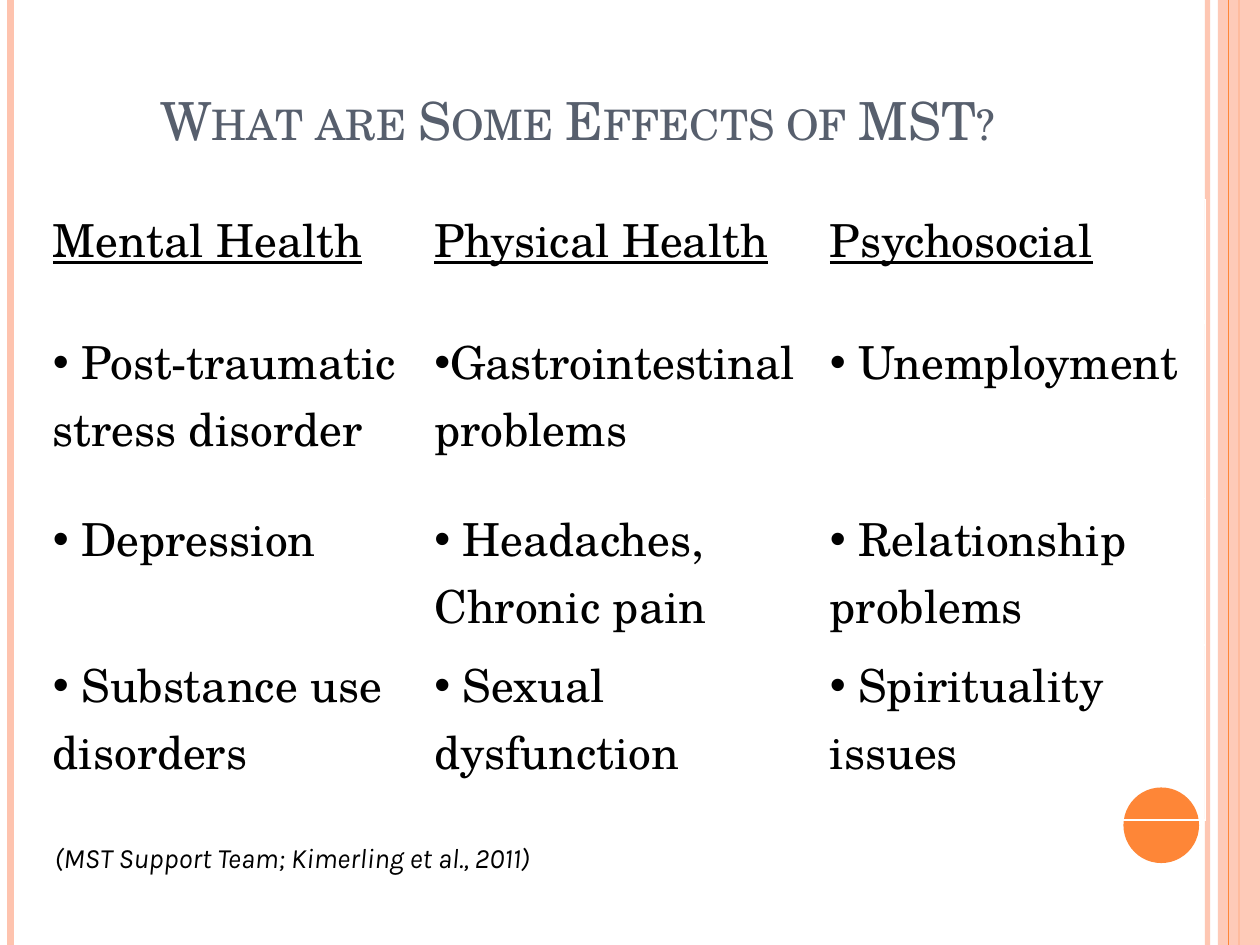
from pptx import Presentation
from pptx.dml.color import RGBColor
from pptx.enum import shapes, text
from pptx.oxml import parse_xml
from pptx.oxml.ns import nsdecls, qn
from pptx.util import Pt

SERIF, SANS = "TeX Gyre Schola", "Karla"
PEACH, ORANGE, SLATE = "FEC3AE", "FE8637", "575F6D"
BLACK, WHITE = "000000", "FFFFFF"


def rgb(value):
    return RGBColor.from_string(value)


def element(tag, **attrs):
    el = parse_xml(f"<a:{tag} {nsdecls('a')}/>")
    for name, value in attrs.items():
        el.set(name, str(value))
    return el


def fade(fill, percent):
    color = fill._xPr.find(qn("a:solidFill"))[0]
    color.append(element("alpha", val=percent * 1000))


class Deck:
    def __init__(self, width, height):
        self.prs = Presentation()
        self.prs.slide_width, self.prs.slide_height = Pt(width), Pt(height)
        self.height = height
        self.s = self.prs.slides.add_slide(self.prs.slide_layouts[5])

    def run(self, p, words, size, font=SERIF, color=BLACK):
        r = p.add_run()
        r.text = words
        r.font.size, r.font.name = Pt(size), font
        r.font.color.rgb = rgb(color)
        return r

    def title(self, words, box):
        sp = self.s.shapes.title
        sp.left, sp.top, sp.width, sp.height = map(Pt, box)
        tf = sp.text_frame
        tf.vertical_anchor = text.MSO_ANCHOR.BOTTOM
        p = tf.paragraphs[0]
        p.alignment = text.PP_ALIGN.CENTER
        r = self.run(p, words, 30, color=SLATE)
        r.font._element.set("cap", "small")

    def stripe(self, x, weight, color, opacity=100):
        line = self.s.shapes.add_connector(
            shapes.MSO_CONNECTOR.STRAIGHT, Pt(x), 0, Pt(x), Pt(self.height))
        line.line.width = Pt(weight)
        line.line.color.rgb = rgb(color)
        if opacity < 100:
            fade(line.line.fill, opacity)
        line._element.spPr.append(element("effectLst"))

    def shape(self, kind, box, color, opacity=100):
        sp = self.s.shapes.add_shape(kind, *map(Pt, box))
        sp.shadow.inherit = False
        sp.fill.solid()
        sp.fill.fore_color.rgb = rgb(color)
        sp.line.fill.background()
        if opacity < 100:
            fade(sp.fill, opacity)

    def borders(self, cell, bottom):
        tcPr = cell._tc.get_or_add_tcPr()
        for i, (side, weight) in enumerate(
                [("lnL", 1), ("lnR", 1), ("lnT", 1), ("lnB", bottom)]):
            ln = element(side, w=Pt(weight))
            fill = element("solidFill")
            fill.append(element("srgbClr", val=WHITE))
            ln.append(fill)
            tcPr.insert(i, ln)

    def table(self, left, top, widths, heights, rows):
        frame = self.s.shapes.add_table(
            len(rows), len(widths), Pt(left), Pt(top),
            Pt(sum(widths)), Pt(sum(heights)))
        table = frame.table
        for column, width in zip(table.columns, widths):
            column.width = Pt(width)
        for i, (row, height) in enumerate(zip(rows, heights)):
            table.rows[i].height = Pt(height)
            for j, words in enumerate(row):
                cell = table.cell(i, j)
                cell.fill.background()
                self.borders(cell, 1 if i else 3)
                p = cell.text_frame.paragraphs[0]
                r = self.run(p, words, 26)
                r.font.bold = False
                r.font.underline = i == 0
                if i:
                    pPr = p._p.get_or_add_pPr()
                    pPr.set("marL", "0")
                    pPr.set("indent", "0")
                    pPr.append(element("buFont", typeface="Arial"))
                    pPr.append(element("buChar", char="•"))

    def citation(self, words, box):
        tf = self.s.shapes.add_textbox(*map(Pt, box)).text_frame
        tf.word_wrap = True
        p = tf.paragraphs[0]
        p.space_before = Pt(3.2)
        pPr = p._p.get_or_add_pPr()
        pPr.set("marL", str(Pt(36)))
        pPr.set("indent", str(Pt(-36)))
        self.run(p, words, 16, SANS).font.italic = True


def main():
    deck = Deck(720, 540)
    deck.stripe(690, 3, PEACH, 93)
    deck.stripe(6, 4.5, PEACH)
    deck.stripe(708, 1.5, ORANGE)
    deck.shape(shapes.MSO_SHAPE.RECTANGLE, (696, 0, 24, 540), PEACH, 87)
    deck.stripe(702, 0.75, ORANGE)
    deck.shape(shapes.MSO_SHAPE.OVAL, (642, 450, 43.2, 43.2), ORANGE)
    deck.title("What are Some Effects of MST?", (36, 0, 588, 90))
    deck.table(23, 114, (218, 226, 222), (70, 101, 78, 100), [
        ("Mental Health", "Physical Health", "Psychosocial"),
        (" Post-traumatic stress disorder", "Gastrointestinal problems",
         " Unemployment"),
        (" Depression", " Headaches, Chronic pain", " Relationship problems"),
        (" Substance use disorders", " Sexual dysfunction",
         " Spirituality issues"),
    ])
    deck.citation("(MST Support Team; Kimerling et al., 2011)",
                  (24, 476.6, 564, 26.6))
    deck.prs.save("out.pptx")


if __name__ == "__main__":
    main()
